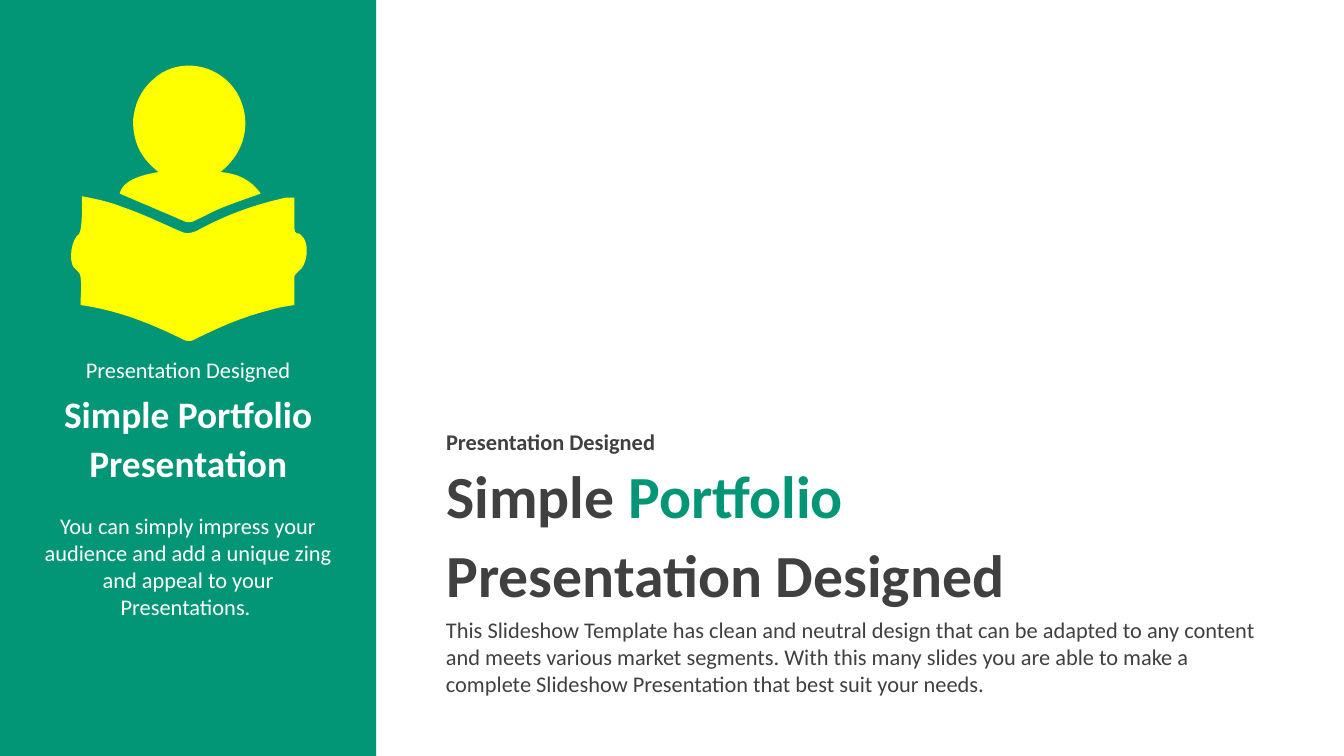
import collections

import lxml.etree
import pptx
import pptx.dml.color
import pptx.enum.shapes
import pptx.enum.text
import pptx.oxml.ns
import pptx.util

Box = collections.namedtuple("Box", "left top width height")

WIDTH = pptx.util.Inches(10)
HEIGHT = WIDTH * 9 // 16
CELL = WIDTH // 100  # the slide is a grid of 100 columns of square cells

FONT = "Calibri"
GREEN, YELLOW, WHITE, GREY = "029676", "FFFF00", "FFFFFF", "404040"
ALIGN = pptx.enum.text.PP_ALIGN
ANCHOR = pptx.enum.text.MSO_ANCHOR
FIT = pptx.enum.text.MSO_AUTO_SIZE

# Outlines in tenths of a cell: a start point, then three points for each curve.
BOOK = [
    (60, 227),
    (60, 220), (61, 213), (60, 206), (60, 204), (59, 203), (58, 202),
    (57, 200), (55, 200), (55, 199), (51, 194), (53, 178), (59, 174),
    (59, 173), (60, 172), (60, 171), (61, 165), (61, 160), (61, 154),
    (61, 152), (61, 149), (61, 146), (71, 148), (81, 150), (91, 154),
    (106, 159), (120, 166), (134, 172), (138, 174), (141, 174), (146, 172),
    (166, 161), (187, 153), (209, 148), (212, 147), (214, 147), (217, 147),
    (218, 147), (218, 147), (219, 147), (219, 154), (219, 161), (219, 169),
    (219, 171), (219, 174), (223, 174), (223, 174), (224, 175), (224, 175),
    (231, 180), (229, 198), (222, 202), (221, 203), (219, 205), (219, 206),
    (219, 213), (219, 220), (219, 227), (213, 228), (206, 229), (200, 231),
    (180, 236), (162, 244), (144, 253), (142, 254), (139, 254), (137, 253),
    (113, 241), (88, 231), (60, 227),
]
READER = [
    (194, 144),
    (183, 148), (174, 151), (164, 155), (157, 158), (150, 162), (143, 165),
    (141, 165), (139, 166), (138, 165), (122, 158), (105, 151), (89, 144),
    (91, 136), (100, 131), (118, 128), (105, 118), (99, 106), (99, 90),
    (100, 78), (104, 68), (114, 59), (130, 44), (156, 46), (171, 62),
    (186, 78), (189, 108), (164, 128), (176, 129), (186, 133), (194, 144),
]


def color(value):
    return pptx.dml.color.RGBColor.from_string(value)


def apply(target, values):
    for name, value in values.items():
        setattr(target, name, value)


def inside(region, left, top, width, height):
    """Turn cells counted from a region's corner into a box on the slide."""
    return Box(region.left + int(left * CELL), region.top + int(top * CELL),
               int(width * CELL), int(height * CELL))


def paint(shape, value):
    shape.shadow.inherit = False
    shape.fill.solid()
    shape.fill.fore_color.rgb = color(value)
    shape.line.fill.background()


def write(shape, spans, size, bold=False, align=ALIGN.LEFT,
          spacing=1.0, anchor=ANCHOR.TOP):
    """Fill a shape with one paragraph of (text, colour) spans."""
    apply(shape.text_frame, {
        "word_wrap": True,
        "auto_size": FIT.SHAPE_TO_FIT_TEXT if anchor == ANCHOR.TOP else FIT.NONE,
        "vertical_anchor": anchor,
    })
    para = shape.text_frame.paragraphs[0]
    apply(para, {"alignment": align, "line_spacing": spacing,
                 "space_before": pptx.util.Pt(0)})
    for text, value in spans:
        span = para.add_run()
        span.text = text
        apply(span.font, {"name": FONT, "size": pptx.util.Pt(size), "bold": bold})
        span.font.color.rgb = color(value)


def add_text(page, box, text, value, size, **style):
    write(page.shapes.add_textbox(*box), [(text, value)], size, **style)


def bend(shape):
    """Turn each three straight segments of a freeform into one curve."""
    tag = pptx.oxml.ns.qn
    path = next(shape.element.iter(tag("a:path")))
    lines = path.findall(tag("a:lnTo"))
    for first in range(0, len(lines), 3):
        curve = lxml.etree.Element(tag("a:cubicBezTo"))
        lines[first].addprevious(curve)
        for line in lines[first:first + 3]:
            curve.append(line[0])
            path.remove(line)


def add_outline(page, region, outline):
    builder = page.shapes.build_freeform(*outline[0], scale=CELL / 10)
    builder.add_line_segments(outline[1:], close=True)
    shape = builder.convert_to_shape(region.left, region.top)
    bend(shape)
    paint(shape, YELLOW)


def build_sidebar(page, region):
    panel = page.shapes.add_shape(pptx.enum.shapes.MSO_SHAPE.RECTANGLE, *region)
    paint(panel, GREEN)
    left, width = 2.05, 23.9
    centred = {"align": ALIGN.CENTER}
    add_text(page, inside(region, left, 25.8, width, 3.2),
             "Presentation Designed", WHITE, 12, spacing=1.1, **centred)
    add_text(page, inside(region, left, 28.1, width, 8.7),
             "Simple Portfolio Presentation", WHITE, 20, bold=True,
             spacing=1.1, anchor=ANCHOR.MIDDLE, **centred)
    add_text(page, inside(region, left, 37.65, width, 9.1),
             "You can simply impress your audience and add a unique zing "
             "and appeal to your Presentations. ", WHITE, 12, **centred)
    for outline in (BOOK, READER):
        add_outline(page, region, outline)


def build_main(page, region):
    left = 4.2
    add_text(page, inside(region, left, 31.15, 23.9, 3.2),
             "Presentation Designed", GREY, 12, bold=True, spacing=1.1)
    title = page.shapes.title
    apply(title, inside(region, left, 33.4, 54.8, 12.1)._asdict())
    write(title, [("Simple ", GREY), ("Portfolio ", GREEN),
                  ("Presentation Designed", GREY)],
          32, bold=True, spacing=1.1, anchor=ANCHOR.MIDDLE)
    add_text(page, inside(region, left, 45.35, 63.4, 7.1),
             "This Slideshow Template has clean and neutral design that can be "
             "adapted to any content and meets various market segments. With "
             "this many slides you are able to make a complete Slideshow "
             "Presentation that best suit your needs.", GREY, 12)


def main():
    deck = pptx.Presentation()
    apply(deck, {"slide_width": WIDTH, "slide_height": HEIGHT})
    page = deck.slides.add_slide(deck.slide_layouts.get_by_name("Title Only"))
    split = 28 * CELL
    build_sidebar(page, Box(0, 0, split, HEIGHT))
    build_main(page, Box(split, 0, WIDTH - split, HEIGHT))
    deck.save("out.pptx")


if __name__ == "__main__":
    main()
